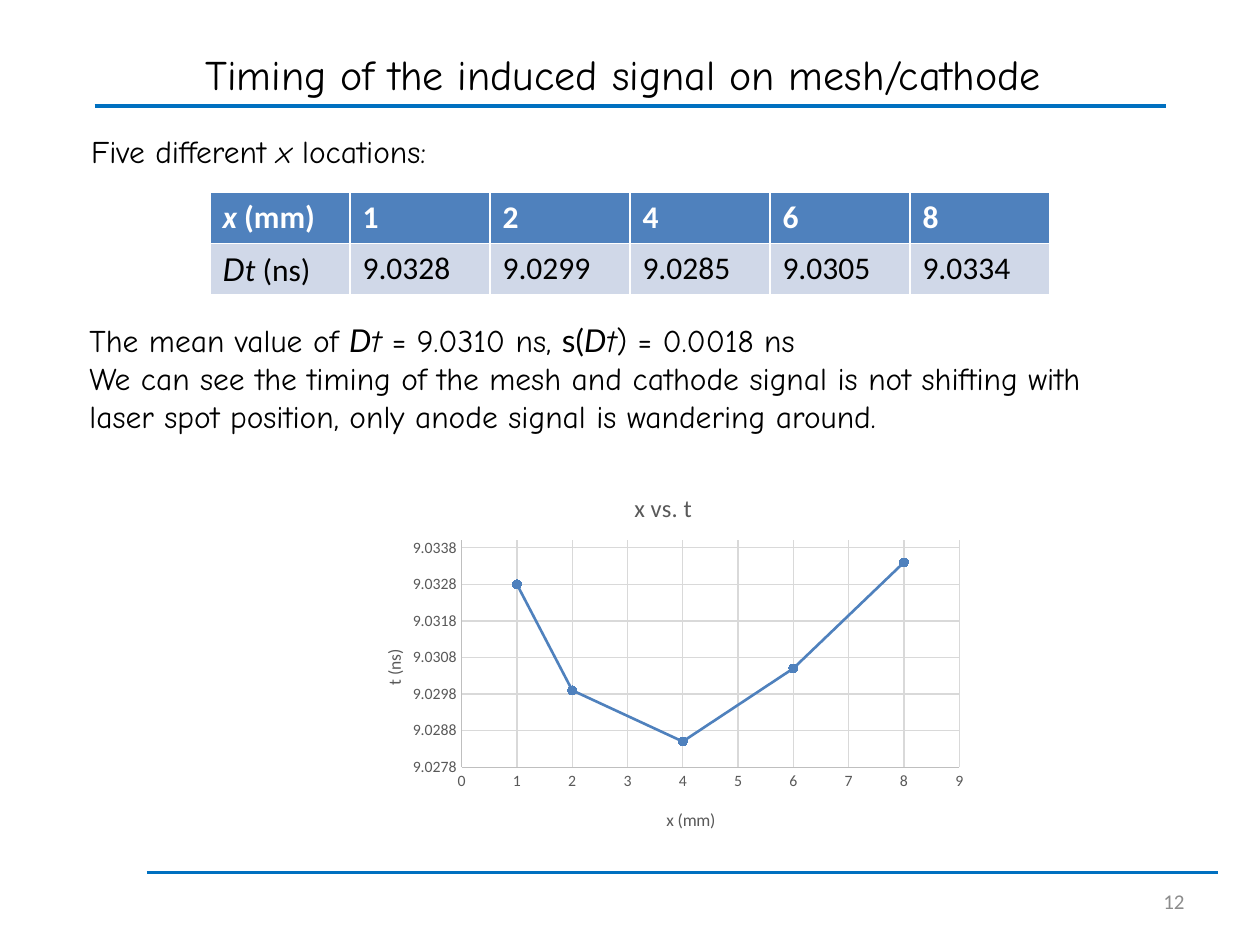
from lxml import etree
from pptx import Presentation
from pptx import util as u
from pptx.chart.data import XyChartData
from pptx.dml.color import RGBColor
from pptx.enum import chart as ch, shapes, text
from pptx.oxml import parse_xml
from pptx.oxml.ns import nsdecls, qn

Pt = u.Pt
COLORS = {"ink": "000000", "white": "FFFFFF", "rule": "0070C0", "head": "4F81BD",
          "band": "D0D8E8", "grey": "595959", "axis": "BFBFBF", "grid": "D9D9D9",
          "number": "8C8C8C"}
HAND, BODY, SYMBOL = "Comic Neue", "Calibri", "Lato"


def rgb(name):
    return RGBColor.from_string(COLORS[name])


def style_font(font, name=BODY, size=18, color="ink", bold=False, italic=False):
    font.name, font.size, font.bold, font.italic = name, Pt(size), bold, italic
    font.color.rgb = rgb(color)


def add_text(p, content, **fmt):
    """Add a string, or a list of strings and (string, overrides) pairs."""
    for part in [content] if isinstance(content, str) else content:
        txt, own = (part, {}) if isinstance(part, str) else part
        r = p.add_run()
        r.text = txt
        style_font(r.font, **{**fmt, **own})


def set_layout(parent, before, x, y, w=None, h=None):
    """Place a chart part by fractions of the chart area."""
    old = parent.find(qn("c:layout"))
    if old is not None:
        parent.remove(old)
    target = '<c:layoutTarget val="inner"/>' if w else ""
    size = f'<c:w val="{w}"/><c:h val="{h}"/>' if w else ""
    before.addprevious(parse_xml(
        f'<c:layout {nsdecls("c")}><c:manualLayout>{target}<c:xMode val="edge"/>'
        f'<c:yMode val="edge"/><c:x val="{x}"/><c:y val="{y}"/>{size}'
        '</c:manualLayout></c:layout>'))


class Deck:
    def __init__(self, width, height):
        self.prs = Presentation()
        self.prs.slide_width, self.prs.slide_height = Pt(width), Pt(height)
        self.s = self.prs.slides.add_slide(self.prs.slide_layouts[5])

    def title(self, content, x, y, w, h):
        sp = self.s.shapes.title
        sp.left, sp.top, sp.width, sp.height = map(Pt, (x, y, w, h))
        p = sp.text_frame.paragraphs[0]
        p.alignment = text.PP_ALIGN.CENTER
        add_text(p, content, name=HAND, size=24)

    def rule(self, x, y, w):
        line = self.s.shapes.add_connector(
            shapes.MSO_CONNECTOR.STRAIGHT, Pt(x), Pt(y), Pt(x + w), Pt(y))
        line.line.color.rgb, line.line.width = rgb("rule"), Pt(2)
        etree.SubElement(line._element.spPr, qn("a:effectLst"))

    def textbox(self, paragraphs, x, y, w, h, align=text.PP_ALIGN.LEFT,
                anchor=text.MSO_ANCHOR.TOP, **fmt):
        tf = self.s.shapes.add_textbox(Pt(x), Pt(y), Pt(w), Pt(h)).text_frame
        tf.word_wrap, tf.vertical_anchor = True, anchor
        for i, content in enumerate(paragraphs):
            p = tf.add_paragraph() if i else tf.paragraphs[0]
            p.alignment = align
            add_text(p, content, **fmt)

    def table(self, rows, x, y, w, h):
        table = self.s.shapes.add_table(
            len(rows), len(rows[0]), Pt(x), Pt(y), Pt(w), Pt(h)).table
        for i, row in enumerate(rows):
            fill, color = ("band", "ink") if i else ("head", "white")
            for j, content in enumerate(row):
                cell = table.cell(i, j)
                cell.fill.solid()
                cell.fill.fore_color.rgb = rgb(fill)
                add_text(cell.text_frame.paragraphs[0], content, color=color, bold=i == 0)

    def axis(self, axis, title, low, high, step, number_format, title_at):
        axis.minimum_scale, axis.maximum_scale, axis.major_unit = low, high, step
        axis.major_tick_mark = axis.minor_tick_mark = ch.XL_TICK_MARK.NONE
        axis.has_major_gridlines = True
        for line, color in ((axis.format.line, "axis"),
                            (axis.major_gridlines.format.line, "grid")):
            line.color.rgb, line.width = rgb(color), Pt(0.75)
        labels = axis.tick_labels
        labels.number_format, labels.number_format_is_linked = number_format, False
        style_font(labels.font, size=9, color="grey")
        add_text(axis.axis_title.text_frame.paragraphs[0], title, size=10, color="grey")
        el = axis.axis_title._element
        set_layout(el, el.find(qn("c:overlay")), *title_at)

    def scatter(self, name, points, x, y, w, h):
        data = XyChartData()
        series = data.add_series(name)
        for point in points:
            series.add_data_point(*point)
        chart = self.s.shapes.add_chart(
            ch.XL_CHART_TYPE.XY_SCATTER_LINES, Pt(x), Pt(y), Pt(w), Pt(h), data).chart
        chart.has_legend = False
        style_font(chart.font, size=10)
        chart.has_title = True
        add_text(chart.chart_title.text_frame.paragraphs[0], name, size=14, color="grey")
        chart.chart_title.include_in_layout = False

        plot = chart.plots[0]
        plot.vary_by_categories = False
        line = plot.series[0]
        line.smooth = False
        line.format.line.color.rgb, line.format.line.width = rgb("head"), Pt(1.5)
        line.marker.style, line.marker.size = ch.XL_MARKER_STYLE.CIRCLE, 5
        line.marker.format.fill.solid()
        line.marker.format.fill.fore_color.rgb = rgb("head")
        line.marker.format.line.color.rgb = rgb("head")

        self.axis(chart.category_axis, "x (mm)", 0, 9, 1, "0", (0.5, 0.88))
        self.axis(chart.value_axis, "t (ns)", 9.0278, 9.034, 0.001, "0.0000", (0.05, 0.46))
        area = plot._element.getparent()
        set_layout(area, plot._element, 0.18, 0.18, 0.79, 0.6)


def main():
    points = [(1, 9.0328), (2, 9.0299), (4, 9.0285), (6, 9.0305), (8, 9.0334)]
    italic = {"italic": True}
    delta = ("D", {"name": SYMBOL, "italic": True})
    deck = Deck(720, 540)

    # Title and rules
    deck.rule(84, 498.5, 612)
    deck.rule(54, 60.5, 612)
    deck.title("Timing of the induced signal on mesh/cathode", 36, 24, 640, 36)

    # Measurements
    deck.textbox([["Five different ", ("x", italic), " locations:"]],
                 45, 72, 622, 29, name=HAND)
    deck.table([[[("x", italic), " (mm)"]] + [str(x) for x, _ in points],
                [[delta, ("t", italic), " (ns)"]] + [f"{t:.4f}" for _, t in points]],
               120, 110, 480, 58.4)

    # Conclusion
    deck.textbox([["The mean value of ", delta, ("t", italic), " = 9.0310 ns, ",
                   ("s(", {"name": SYMBOL}), delta, ("t", italic), (") = 0.0018 ns")],
                  "We can see the timing of the mesh and cathode signal is not shifting "
                  "with laser spot position, only anode signal is wandering around."],
                 44, 180, 594, 73, name=HAND)

    # Chart
    deck.scatter("x vs. t", points, 199, 270, 360, 216)

    # Slide number
    deck.textbox(["12"], 516, 500.5, 168, 28.8, align=text.PP_ALIGN.RIGHT,
                 anchor=text.MSO_ANCHOR.MIDDLE, size=12, color="number")
    deck.prs.save("out.pptx")


if __name__ == "__main__":
    main()
